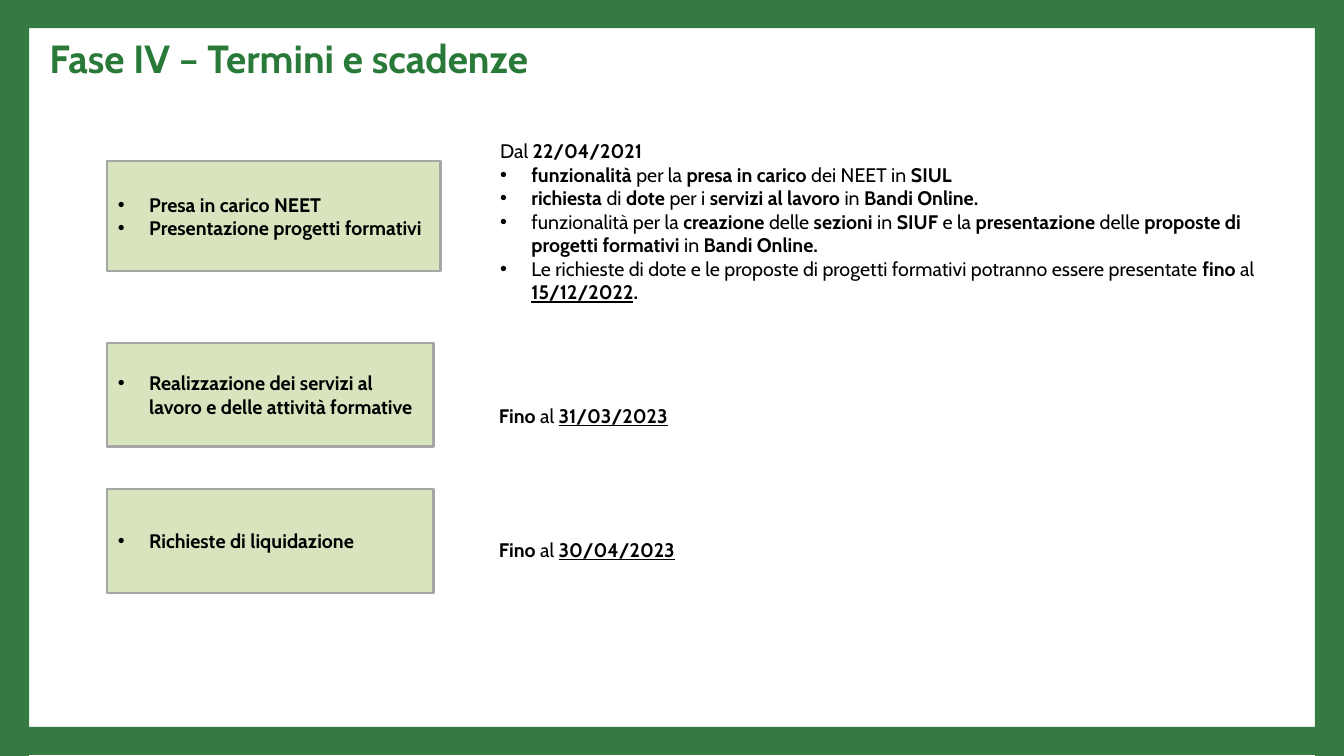
import pptx
import pptx.dml.color
import pptx.enum.shapes
import pptx.enum.text
import pptx.oxml.ns
import pptx.util
from lxml import etree
from pptx.util import Inches

FONT = "Cabin"
FRAME_GREEN = "357943"
TITLE_GREEN = "297A38"
BOX_GREEN = "D7E4BD"
BOX_BORDER = "A6A6A6"
BLACK = "000000"

REGULAR, BOLD, DEADLINE = "regular", "bold", "deadline"


def color(hex_string):
    return pptx.dml.color.RGBColor.from_string(hex_string)


def place(shape, left, top, width, height):
    shape.left, shape.top = Inches(left), Inches(top)
    shape.width, shape.height = Inches(width), Inches(height)


def prepare_frame(shape, anchor, inset_x, inset_y):
    frame = shape.text_frame
    frame.word_wrap = True
    frame.auto_size = pptx.enum.text.MSO_AUTO_SIZE.NONE
    frame.vertical_anchor = anchor
    frame.margin_left = frame.margin_right = Inches(inset_x)
    frame.margin_top = frame.margin_bottom = Inches(inset_y)
    return frame


def set_bullet(paragraph, margin, bulleted):
    """Give a paragraph a hanging bullet, or clear the inherited one."""
    properties = paragraph._p.get_or_add_pPr()
    properties.set("marL", str(Inches(margin)))
    properties.set("indent", str(Inches(-0.31) if bulleted else 0))
    if bulleted:
        font = etree.SubElement(properties, pptx.oxml.ns.qn("a:buFont"))
        font.set("typeface", "Arial")
        bullet = etree.SubElement(properties, pptx.oxml.ns.qn("a:buChar"))
        bullet.set("char", "•")
    else:
        etree.SubElement(properties, pptx.oxml.ns.qn("a:buNone"))


def add_runs(paragraph, runs, size=14, text_color=BLACK):
    paragraph.alignment = pptx.enum.text.PP_ALIGN.LEFT
    paragraph.space_before = pptx.util.Pt(0)
    for text, style in runs:
        run = paragraph.add_run()
        run.text = text
        run.font.name = FONT
        run.font.size = pptx.util.Pt(size)
        run.font.bold = style != REGULAR
        run.font.underline = style == DEADLINE
        run.font.color.rgb = color(text_color)


def add_paragraphs(frame, paragraphs, margin, first_bullet=0):
    """Write the paragraphs, with bullets from index first_bullet on."""
    for index, runs in enumerate(paragraphs):
        paragraph = frame.add_paragraph() if index else frame.paragraphs[0]
        bulleted = index >= first_bullet
        set_bullet(paragraph, margin if bulleted else 0, bulleted)
        add_runs(paragraph, runs)


def add_rectangle(slide, left, top, width, height, fill):
    shape = slide.shapes.add_shape(
        pptx.enum.shapes.MSO_SHAPE.RECTANGLE,
        Inches(left), Inches(top), Inches(width), Inches(height))
    shape.shadow.inherit = False
    shape.fill.solid()
    shape.fill.fore_color.rgb = color(fill)
    shape.line.fill.background()
    return shape


def add_phase_box(slide, top, width, height, items):
    shape = add_rectangle(slide, 1.06, top, width, height, BOX_GREEN)
    shape.line.color.rgb = color(BOX_BORDER)
    shape.line.width = pptx.util.Pt(1.5)
    frame = prepare_frame(shape, pptx.enum.text.MSO_ANCHOR.MIDDLE, 0.04, 0.04)
    add_paragraphs(frame, [[(item, BOLD)] for item in items], 0.38)


def add_deadline(slide, top, date):
    box = slide.shapes.add_textbox(
        Inches(4.85), Inches(top), Inches(7.04), Inches(0.34))
    frame = prepare_frame(box, pptx.enum.text.MSO_ANCHOR.TOP, 0.1, 0.05)
    add_runs(frame.paragraphs[0],
             [("Fino ", BOLD), ("al ", REGULAR), (date, DEADLINE)])


def add_title(slide, text):
    title = slide.shapes.title
    place(title, 0.39, 0.24, 12.56, 0.67)
    frame = prepare_frame(title, pptx.enum.text.MSO_ANCHOR.TOP, 0.1, 0.1)
    add_runs(frame.paragraphs[0], [(text, BOLD)], 28, TITLE_GREEN)


def add_terms(slide, paragraphs):
    body = slide.placeholders[1]
    place(body, 4.86, 1.33, 7.69, 1.75)
    frame = prepare_frame(body, pptx.enum.text.MSO_ANCHOR.TOP, 0.1, 0.05)
    add_paragraphs(frame, paragraphs, 0.31, first_bullet=1)


TERMS = [
    [("Dal ", REGULAR), ("22/04/2021", BOLD)],
    [("funzionalità ", BOLD), ("per la ", REGULAR),
     ("presa in carico ", BOLD), ("dei NEET in ", REGULAR), ("SIUL", BOLD)],
    [("richiesta ", BOLD), ("di", REGULAR), (" dote", BOLD),
     (" per i ", REGULAR), ("servizi al lavoro ", BOLD), ("in", REGULAR),
     (" Bandi Online.", BOLD)],
    [("funzionalità per la ", REGULAR), ("creazione ", BOLD),
     ("delle", REGULAR), (" sezioni ", BOLD), ("in ", REGULAR),
     ("SIUF", BOLD), (" e la ", REGULAR), ("presentazione ", BOLD),
     ("delle", REGULAR), (" proposte di progetti formativi ", BOLD),
     ("in ", REGULAR), ("Bandi Online.", BOLD)],
    [("Le richieste di dote e le proposte di progetti formativi "
      "potranno essere presentate ", REGULAR), ("fino ", BOLD),
     ("al ", REGULAR), ("15/12/2022", DEADLINE), (".", BOLD)],
]


def main():
    presentation = pptx.Presentation()
    presentation.slide_width = Inches(13.33)
    presentation.slide_height = Inches(7.5)
    slide = presentation.slides.add_slide(presentation.slide_layouts[1])

    # Green frame around the slide
    for left in (0, 13.04):
        add_rectangle(slide, left, 0, 0.29, 7.5, FRAME_GREEN)
    for top in (0, 7.21):
        add_rectangle(slide, 0, top, 13.33, 0.28, FRAME_GREEN)

    add_title(slide, "Fase IV – Termini e scadenze")

    # Phases on the left
    add_phase_box(slide, 1.6, 3.31, 1.09,
                  ["Presa in carico NEET", "Presentazione progetti formativi"])
    add_phase_box(slide, 3.4, 3.24, 1.03,
                  ["Realizzazione dei servizi al lavoro "
                   "e delle attività formative"])
    add_phase_box(slide, 4.85, 3.24, 1.03, ["Richieste di liquidazione"])

    # Terms and deadlines on the right
    add_terms(slide, TERMS)
    add_deadline(slide, 3.96, "31/03/2023")
    add_deadline(slide, 5.29, "30/04/2023")

    presentation.save("out.pptx")


if __name__ == "__main__":
    main()
